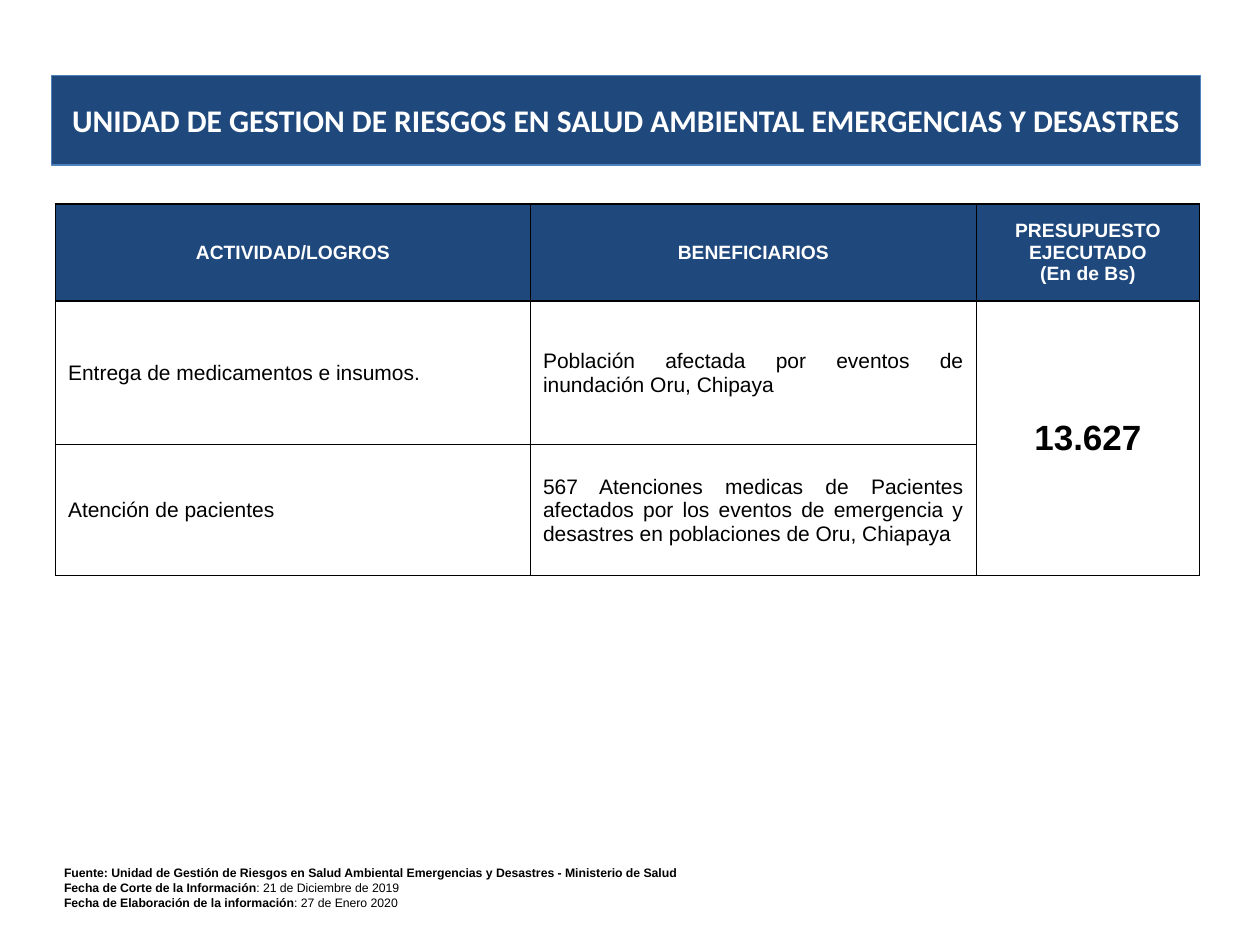
"""Build the slide on activities and budget of the health emergency unit."""
import lxml.etree
import pptx
import pptx.dml.color
import pptx.enum.shapes
import pptx.enum.text
import pptx.oxml.ns
import pptx.util

Inches = pptx.util.Inches
Align = pptx.enum.text.PP_ALIGN
Middle = pptx.enum.text.MSO_ANCHOR.MIDDLE
NAVY, BLACK, WHITE = "1F497D", "000000", "FFFFFF"


def style_font(font, size, color, bold=False, name="Arial"):
    font.name = name
    font.size = pptx.util.Pt(size)
    font.bold = bold
    font.color.rgb = pptx.dml.color.RGBColor.from_string(color)


def add_borders(cell, color, width):
    properties = cell._tc.get_or_add_tcPr()
    for position, side in enumerate(("a:lnL", "a:lnR", "a:lnT", "a:lnB")):
        line = lxml.etree.Element(pptx.oxml.ns.qn(side), w=str(pptx.util.Pt(width)))
        fill = lxml.etree.SubElement(line, pptx.oxml.ns.qn("a:solidFill"))
        lxml.etree.SubElement(fill, pptx.oxml.ns.qn("a:srgbClr"), val=color)
        properties.insert(position, line)


presentation = pptx.Presentation()
presentation.slide_width = Inches(10)
presentation.slide_height = Inches(7.5)
slide = presentation.slides.add_slide(presentation.slide_layouts[6])

banner = slide.shapes.add_shape(
    pptx.enum.shapes.MSO_SHAPE.RECTANGLE, Inches(0.41), Inches(0.6), Inches(9.12), Inches(0.71)
)
banner.shadow.inherit = False
banner.fill.solid()
banner.fill.fore_color.rgb = pptx.dml.color.RGBColor.from_string(NAVY)
banner.line.color.rgb = pptx.dml.color.RGBColor.from_string("4F81BD")
banner.line.width = pptx.util.Pt(0.75)
banner.text_frame.word_wrap = True
banner.text_frame.vertical_anchor = Middle
paragraph = banner.text_frame.paragraphs[0]
paragraph.text = "UNIDAD DE GESTION DE RIESGOS EN SALUD AMBIENTAL EMERGENCIAS Y DESASTRES"
paragraph.alignment = Align.CENTER
style_font(paragraph.font, 18, WHITE, True, "Calibri")

rows = [
    ["ACTIVIDAD/LOGROS", "BENEFICIARIOS", "PRESUPUESTO EJECUTADO\n(En de Bs)"],
    [
        "Entrega de medicamentos e insumos.",
        "Población afectada por eventos de inundación Oru, Chipaya",
        "13.627",
    ],
    [
        "Atención de pacientes",
        "567 Atenciones medicas de Pacientes afectados por los eventos de emergencia "
        "y desastres en poblaciones de Oru, Chiapaya",
        "",
    ],
]
table = slide.shapes.add_table(
    3, 3, Inches(0.44), Inches(1.62), Inches(9.08), Inches(2.95)
).table
table.first_row = False
table.horz_banding = False
for column, width in zip(table.columns, (3.77, 3.54, 1.77)):
    column.width = Inches(width)
for row, height in zip(table.rows, (0.77, 1.14, 1.04)):
    row.height = Inches(height)
table.cell(1, 2).merge(table.cell(2, 2))

for row_index, texts in enumerate(rows):
    for column_index, text in enumerate(texts):
        cell = table.cell(row_index, column_index)
        header = row_index == 0
        budget = column_index == 2
        cell.vertical_anchor = Middle
        if header:
            cell.fill.solid()
            cell.fill.fore_color.rgb = pptx.dml.color.RGBColor.from_string(NAVY)
        else:
            cell.fill.background()
        add_borders(cell, BLACK, 1)
        if header or budget:
            cell.margin_left = cell.margin_right = Inches(0.13)
        if text:
            cell.text = text
        for paragraph in cell.text_frame.paragraphs:
            if header:
                paragraph.alignment = Align.CENTER
                style_font(paragraph.font, 11, WHITE, True)
            elif budget:
                paragraph.alignment = Align.CENTER
                style_font(paragraph.font, 20, BLACK, True)
            else:
                paragraph.alignment = (Align.LEFT, Align.JUSTIFY)[column_index]
                style_font(paragraph.font, 12, BLACK)

source_lines = [
    (
        "Fuente: Unidad de Gestión de Riesgos en Salud Ambiental Emergencias y Desastres"
        " - Ministerio de Salud",
        "",
    ),
    ("Fecha de Corte de la Información", ": 21 de Diciembre de 2019"),
    ("Fecha de Elaboración de la información", ": 27 de Enero 2020"),
]
source_box = slide.shapes.add_textbox(Inches(0.41), Inches(6.82), Inches(6.72), Inches(0.45))
frame = source_box.text_frame
frame.word_wrap = True
frame.auto_size = pptx.enum.text.MSO_AUTO_SIZE.SHAPE_TO_FIT_TEXT
for index, (label, detail) in enumerate(source_lines):
    paragraph = frame.add_paragraph() if index else frame.paragraphs[0]
    for text, bold in ((label, True), (detail, False)):
        if text:
            run = paragraph.add_run()
            run.text = text
            style_font(run.font, 7, BLACK, bold)

presentation.save("out.pptx")
